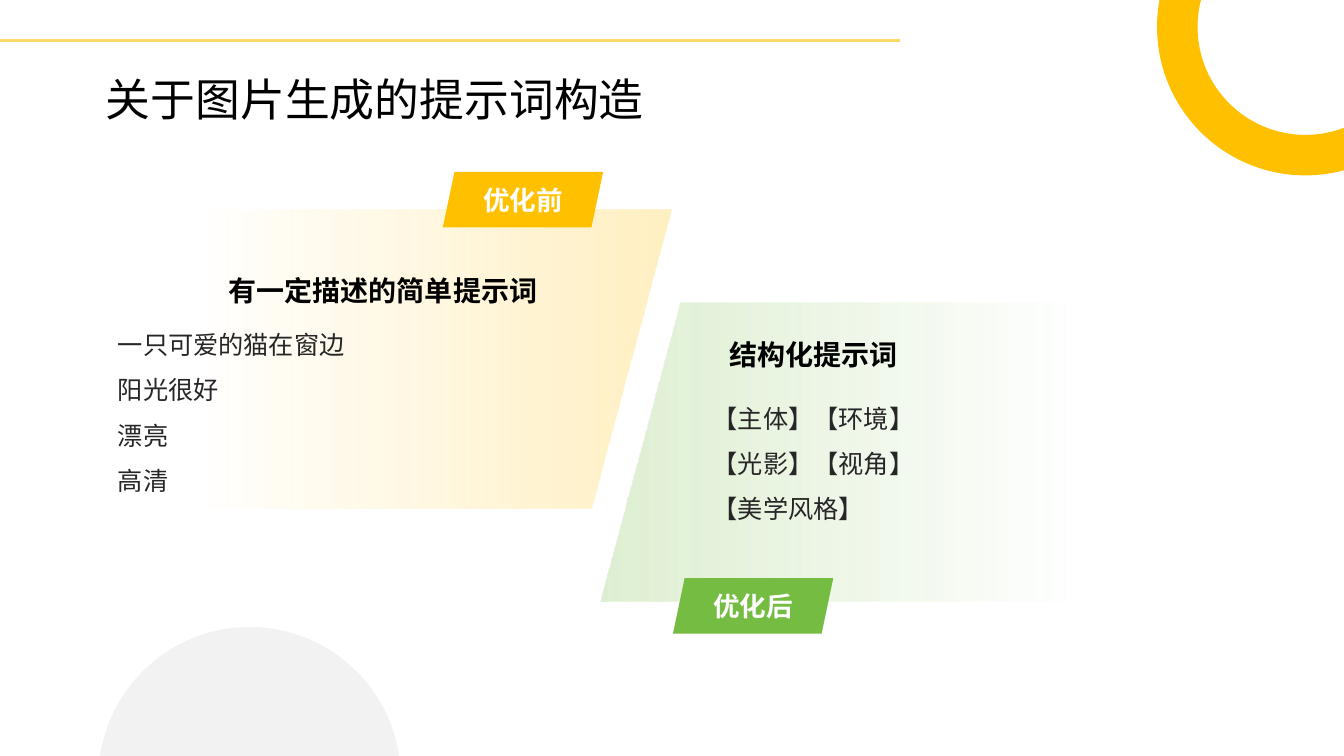
import itertools
import math
from dataclasses import dataclass

import pptx
import pptx.dml.color
import pptx.enum.shapes
import pptx.enum.text
import pptx.oxml.ns
import pptx.util
from lxml import etree

Cm = pptx.util.Cm
Pt = pptx.util.Pt
ALIGN = pptx.enum.text.PP_ALIGN
ANCHOR = pptx.enum.text.MSO_ANCHOR
qn = pptx.oxml.ns.qn


@dataclass(frozen=True)
class Theme:
    gold: str = "FFC000"
    sand: str = "FFD966"
    green: str = "75BD42"
    mint: str = "ACD78E"
    black: str = "000000"
    ink: str = "262626"
    white: str = "FFFFFF"
    latin: str = "Arial"
    han: str = "Noto Sans CJK SC"
    title: int = 32
    head: int = 20
    tag: int = 19
    body: int = 18


THEME = Theme()
WIDE, HIGH = 33.87, 19.05


def rgb(code):
    return pptx.dml.color.RGBColor.from_string(code)


def fade(shape, levels):
    """Give the fill colours of a shape their opacity, in percent."""
    colors = shape.element.spPr.iter(qn("a:srgbClr"))
    for color, level in zip(colors, levels):
        etree.SubElement(color, qn("a:alpha"), val=str(level * 1000))


def plain(shape, color):
    shape.shadow.inherit = False
    shape.line.fill.background()
    shape.fill.solid()
    shape.fill.fore_color.rgb = rgb(color)


def write(frame, lines, size, color, face=THEME.latin, bold=False,
          align=ALIGN.LEFT, space=1.0):
    frame.word_wrap = True
    frame.text = "\n".join(lines)
    for para in frame.paragraphs:
        para.alignment = align
        para.line_spacing = space
        font = para.font
        font.size, font.bold, font.name = Pt(size), bold, face
        font.color.rgb = rgb(color)
        props = para._p.pPr.find(qn("a:defRPr"))
        etree.SubElement(props, qn("a:ea"), typeface=THEME.han)


def trim(frame):
    frame.margin_left = frame.margin_right = 0
    frame.margin_top = frame.margin_bottom = 0


def add_title(slide, text):
    title = slide.shapes.title
    title.left, title.top = Cm(2.67), Cm(1.16)
    title.width, title.height = Cm(26.34), Cm(2)
    frame = title.text_frame
    trim(frame)
    frame.vertical_anchor = ANCHOR.BOTTOM
    write(frame, [text], THEME.title, THEME.black)


def add_text(slide, box, lines, *style, **extra):
    frame = slide.shapes.add_textbox(*map(Cm, box)).text_frame
    trim(frame)
    write(frame, lines, *style, **extra)


def arc(center, radius, turns):
    """Bezier points along an arc through the given angles."""
    def spot(turn, pull=0.0):
        cos, sin = math.cos(turn), math.sin(turn)
        return (center[0] + radius * (cos - pull * sin),
                center[1] + radius * (sin + pull * cos))

    points = [spot(turns[0])]
    for start, end in itertools.pairwise(turns):
        pull = 4 / 3 * math.tan((end - start) / 4)
        points += [spot(start, pull), spot(end, -pull), spot(end)]
    return points


def add_form(slide, points, kinds, color):
    """Draw an outline; kinds has L for each line, C for each curve."""
    first, *rest = [(Cm(x), Cm(y)) for x, y in points]
    form = slide.shapes.build_freeform(*first)
    form.add_line_segments(rest)
    shape = form.convert_to_shape()
    route = next(shape.element.spPr.iter(qn("a:path")))
    steps = iter(route.findall(qn("a:lnTo")))
    for kind, step in zip(kinds, steps):
        if kind == "C":
            step.tag = qn("a:cubicBezTo")
            for extra in (next(steps), next(steps)):
                step.append(extra[0])
                route.remove(extra)
    plain(shape, color)
    return shape


def add_ring(slide):
    """Draw the corner ring, cut at the top and right slide edges."""
    center = x, y = 32.9, 0.68
    outer, inner = (
        [math.acos((WIDE - x) / r), math.pi / 2, math.pi,
         math.pi + math.asin(y / r)] for r in (3.74, 2.72))
    points = arc(center, 3.74, outer) + arc(center, 2.72, inner[::-1])
    add_form(slide, points, "CCCLCCC", THEME.gold)


def add_dome(slide):
    """Draw the pale disc, cut at the bottom slide edge."""
    center, radius = (6.29, 19.61), 3.81
    cut = math.asin((center[1] - HIGH) / radius)
    turns = [math.pi + cut, math.pi * 1.5, math.pi * 2 - cut]
    dome = add_form(slide, arc(center, radius, turns), "CC", THEME.black)
    fade(dome, [5])


def add_panel(slide, left, top, color, angle):
    wide, high, skew = 14.9, 7.53, 2.02
    points = [(left + wide - skew, top + high), (left, top + high),
              (left + skew, top), (left + wide, top)]
    shape = add_form(slide, points, "LLL", color)
    shape.fill.gradient()
    shape.fill.gradient_angle = angle
    for stop, place in zip(shape.fill.gradient_stops, (0.2, 1.0)):
        stop.position = place
        stop.color.rgb = rgb(color)
    fade(shape, [0, 40])


def add_tag(slide, left, top, color, text):
    kind = pptx.enum.shapes.MSO_SHAPE.PARALLELOGRAM
    box = (left, top, 4.04, 1.4)
    shape = slide.shapes.add_shape(kind, *map(Cm, box))
    shape.adjustments[0] = 0.21
    plain(shape, color)
    shape.text_frame.vertical_anchor = ANCHOR.MIDDLE
    write(shape.text_frame, [text], THEME.tag, THEME.white, bold=True,
          align=ALIGN.CENTER)


def add_rule(slide):
    kind = pptx.enum.shapes.MSO_CONNECTOR.STRAIGHT
    rule = slide.shapes.add_connector(kind, 0, Cm(1.02), Cm(22.68), Cm(1.02))
    rule.line.color.rgb = rgb(THEME.sand)
    rule.line.width = Pt(2.25)
    etree.SubElement(rule.element.spPr, qn("a:effectLst"))


def main():
    deck = pptx.Presentation()
    deck.slide_width, deck.slide_height = Cm(WIDE), Cm(HIGH)
    slide = deck.slides.add_slide(deck.slide_layouts.get_by_name("Title Only"))
    head = (THEME.head, THEME.black)
    body = (THEME.body, THEME.ink, THEME.han)

    add_ring(slide)
    add_dome(slide)
    add_title(slide, "关于图片生成的提示词构造")

    add_panel(slide, 15.14, 7.62, THEME.mint, 180)
    add_tag(slide, 16.96, 14.57, THEME.green, "优化后")
    add_panel(slide, 2.03, 5.28, THEME.sand, 0)
    add_tag(slide, 11.16, 4.33, THEME.gold, "优化前")

    add_text(slide, (2.97, 6.88, 10.57, 1.02), ["有一定描述的简单提示词"],
             *head, bold=True, align=ALIGN.RIGHT)
    add_text(slide, (2.97, 7.92, 10.57, 4.9),
             ["一只可爱的猫在窗边", "阳光很好", "漂亮", "高清"],
             *body, align=ALIGN.JUSTIFY, space=1.5)
    add_text(slide, (18.38, 8.51, 9.55, 1.02), ["结构化提示词"],
             *head, bold=True)
    add_text(slide, (17.96, 9.77, 6.88, 3.78),
             ["【主体】【环境】", "【光影】【视角】", "【美学风格】"],
             *body, space=1.5)
    add_rule(slide)
    deck.save("out.pptx")


if __name__ == "__main__":
    main()
